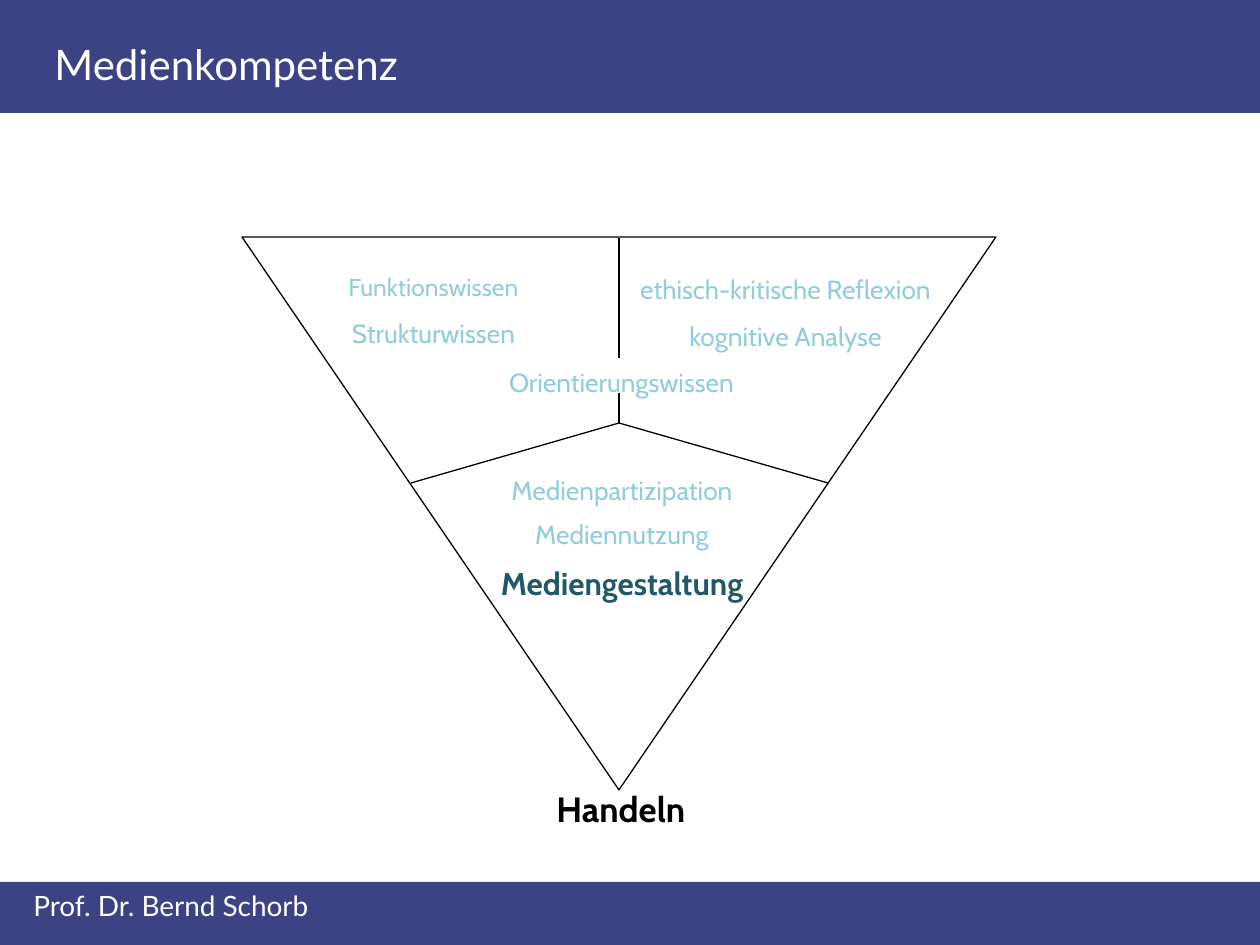
from dataclasses import dataclass

from lxml.etree import SubElement
from pptx import Presentation
from pptx.dml.color import RGBColor
from pptx.enum.shapes import MSO_CONNECTOR, MSO_SHAPE
from pptx.enum.text import MSO_AUTO_SIZE, PP_ALIGN
from pptx.oxml.ns import qn
from pptx.util import Emu, Pt

EMU_PER_PX = 914400 / 126


def px(n):
    return Emu(round(n * EMU_PER_PX))


@dataclass(frozen=True)
class Theme:
    bar: str = "3C4384"
    white: str = "FFFFFF"
    black: str = "000000"
    term: str = "93CDDD"
    accent: str = "215968"
    ui_font: str = "Lato"
    font: str = "Cabin"
    title_size: int = 24
    action_size: int = 20
    accent_size: int = 18
    footer_size: int = 16
    term_size: int = 15
    small_size: int = 14
    line_width: float = 0.75


class SlideBuilder:
    def __init__(self, slide, theme):
        self.s = slide
        self.t = theme

    def bar(self, top, height):
        sp = self.s.shapes.add_shape(
            MSO_SHAPE.RECTANGLE, px(0), px(top), px(1260), px(height))
        sp.shadow.inherit = False
        sp.fill.solid()
        sp.fill.fore_color.rgb = RGBColor.from_string(self.t.bar)
        sp.line.fill.background()

    def triangle(self, *box):
        sp = self.s.shapes.add_shape(
            MSO_SHAPE.ISOSCELES_TRIANGLE, *map(px, box))
        sp.shadow.inherit = False
        sp.fill.background()
        self.stroke(sp.line)
        sp._element.spPr.xfrm.set("flipV", "1")

    def line(self, start, end):
        cx = self.s.shapes.add_connector(
            MSO_CONNECTOR.STRAIGHT, *map(px, start + end))
        self.stroke(cx.line)
        SubElement(cx._element.spPr, qn("a:effectLst"))

    def stroke(self, line):
        line.color.rgb = RGBColor.from_string(self.t.black)
        line.width = Pt(self.t.line_width)

    def text(self, box, rows, font, align=PP_ALIGN.LEFT, spacing=None, wrap=False):
        tf = self.s.shapes.add_textbox(*map(px, box)).text_frame
        tf.word_wrap = wrap
        tf.auto_size = MSO_AUTO_SIZE.SHAPE_TO_FIT_TEXT
        tf.text = "\n".join(row[0] for row in rows)
        for p, (_, size, color, bold) in zip(tf.paragraphs, rows):
            p.alignment = align
            p.line_spacing = spacing
            r = p.runs[0]
            r.font.name = font
            r.font.size = Pt(size)
            r.font.bold = bold
            r.font.color.rgb = RGBColor.from_string(color)

    def heading(self, box, text, size):
        self.text(box, [(text, size, self.t.white, False)], self.t.ui_font, wrap=True)

    def terms(self, box, rows, spacing=None):
        self.text(box, rows, self.t.font, PP_ALIGN.CENTER, spacing)

    def term(self, text, size=None):
        return text, size or self.t.term_size, self.t.term, False


def main():
    prs = Presentation()
    prs.slide_width, prs.slide_height = px(1260), px(945)
    t = Theme()
    b = SlideBuilder(prs.slides.add_slide(prs.slide_layouts[6]), t)

    b.bar(0, 113)
    b.heading((42, 32, 925, 63), "Medienkompetenz", t.title_size)
    b.bar(882, 63)
    b.heading((21, 882, 1218, 47), "Prof. Dr. Bernd Schorb", t.footer_size)

    b.triangle(242, 237, 754, 553)
    hub = (619, 423)
    for start in ((411, 483), (828, 483), (619, 393)):
        b.line(start, hub)
    b.line((619, 238), (619, 358))

    b.terms((332, 251, 203, 105),
            [b.term("Funktionswissen", t.small_size), b.term("Strukturwissen")], 1.5)
    b.terms((615, 251, 341, 111),
            [b.term("ethisch-kritische Reflexion"), b.term("kognitive Analyse")], 1.5)
    b.terms((490, 360, 263, 54), [b.term("Orientierungswissen")])
    b.terms((479, 455, 286, 155),
            [b.term("Medienpartizipation"), b.term("Mediennutzung"),
             ("Mediengestaltung", t.accent_size, t.accent, True)], 1.4)
    b.text((544, 781, 164, 54),
           [("Handeln", t.action_size, t.black, True)], t.font)

    prs.save("out.pptx")


if __name__ == "__main__":
    main()
